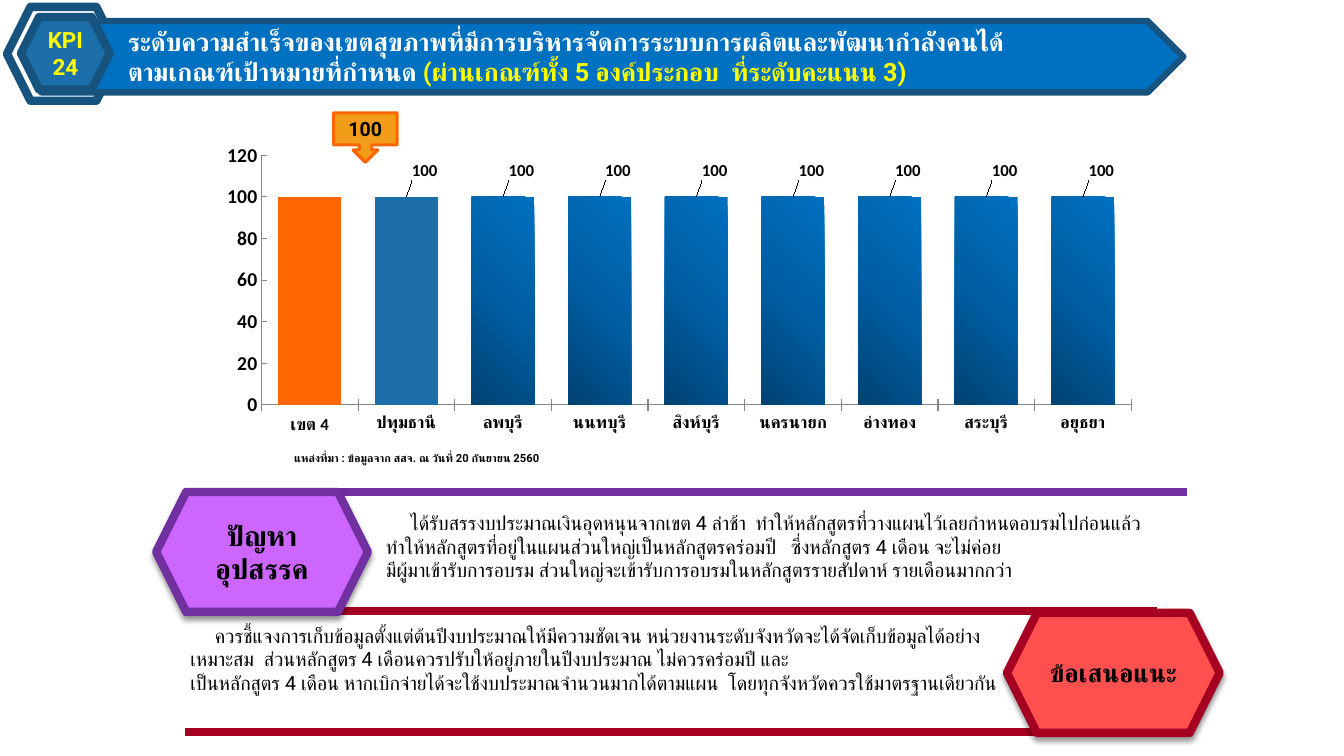
from lxml import etree
from pptx import Presentation
from pptx import util as u
from pptx.chart import data as chart_data
from pptx.dml.color import RGBColor
from pptx.enum import chart as charts, lang, shapes, text
from pptx.oxml import parse_xml
from pptx.oxml.ns import nsdecls, qn

COLORS = {
    "white": "FFFFFF", "black": "000000", "yellow": "FFFF00",
    "blue": "0070C0", "mid_blue": "005EA2", "deep_blue": "004272",
    "steel": "1D6FA9", "navy": "16537F", "orange": "FF6600", "amber": "F19D19",
    "purple": "7030A0", "violet": "CC66FF", "crimson": "A50021",
    "red": "FF5050", "gray": "868686",
}
SHAPE = shapes.MSO_SHAPE
MIDDLE, TOP = text.MSO_ANCHOR.MIDDLE, text.MSO_ANCHOR.TOP


def rgb(name):
    return RGBColor.from_string(COLORS[name])


class SlideBuilder:
    font = "Roboto"
    chart_font = "Calibri"

    def __init__(self, slide):
        self.slide = slide

    def line(self, x1, x2, y, color):
        connector = self.slide.shapes.add_connector(
            shapes.MSO_CONNECTOR.STRAIGHT, u.Pt(x1), u.Pt(y), u.Pt(x2), u.Pt(y))
        connector.line.color.rgb = rgb(color)
        connector.line.width = u.Pt(6)
        etree.SubElement(connector._element.spPr, qn("a:effectLst"))

    def shape(self, kind, box, fill, line, width, shadow=False):
        shape = self.slide.shapes.add_shape(kind, *map(u.Pt, box))
        if fill:
            shape.fill.solid()
            shape.fill.fore_color.rgb = rgb(fill)
        else:
            shape.fill.background()
        shape.line.color.rgb = rgb(line)
        shape.line.width = u.Pt(width)
        shape.shadow.inherit = False
        if shadow:
            shape._element.spPr.find(qn("a:effectLst")).append(parse_xml(
                f'<a:outerShdw {nsdecls("a")} blurRad="{u.Pt(4)}" dist="{u.Pt(3)}" '
                f'dir="5400000" rotWithShape="0"><a:srgbClr val="{COLORS["black"]}">'
                '<a:alpha val="40000"/></a:srgbClr></a:outerShdw>'))
        return shape

    def text_box(self, box):
        return self.slide.shapes.add_textbox(*map(u.Pt, box))

    def add_text(self, shape, paragraphs, size, bold=False, align=text.PP_ALIGN.LEFT,
                 anchor=TOP, wrap=True, margin=0, first_indent=0, inset=None):
        """Each paragraph is a list of (words, color) runs."""
        frame = shape.text_frame
        frame.word_wrap = wrap
        frame.vertical_anchor = anchor
        if inset is not None:
            frame.margin_left = frame.margin_right = u.Pt(inset)
        for number, runs in enumerate(paragraphs):
            paragraph = frame.add_paragraph() if number else frame.paragraphs[0]
            paragraph.alignment = align
            properties = paragraph._p.get_or_add_pPr()
            properties.set("marL", str(u.Pt(margin)))
            properties.set("indent", str(u.Pt(0 if number else first_indent)))
            for words, color in runs:
                run = paragraph.add_run()
                run.text = words
                run.font.name = self.font
                run.font.size = u.Pt(size)
                run.font.bold = bold
                run.font.color.rgb = rgb(color)
                run.font.language_id = lang.MSO_LANGUAGE_ID.THAI
                etree.SubElement(run._r.rPr, qn("a:cs"), typeface=self.font)

    def style_font(self, font, size, bold=True):
        font.name = self.chart_font
        font.size = u.Pt(size)
        font.bold = bold
        font.color.rgb = rgb("black")

    def layout(self, x, y, extra=""):
        return parse_xml(f'<c:layout {nsdecls("c")}><c:manualLayout>{extra}'
                         f'<c:x val="{x}"/><c:y val="{y}"/></c:manualLayout></c:layout>')

    def column_chart(self, box, categories, values):
        data = chart_data.CategoryChartData(number_format="0")
        data.categories = categories
        data.add_series("Series 1", values)
        chart = self.slide.shapes.add_chart(
            charts.XL_CHART_TYPE.COLUMN_CLUSTERED, *map(u.Pt, box), data).chart
        chart.has_title = chart.has_legend = False
        self.style_font(chart.font, 18, False)

        # Axes
        ticks = charts.XL_TICK_MARK
        for axis, size, tick in ((chart.category_axis, 12, ticks.CROSS),
                                 (chart.value_axis, 14, ticks.INSIDE)):
            self.style_font(axis.tick_labels.font, size)
            axis.major_tick_mark = tick
            axis.minor_tick_mark = ticks.NONE
            axis.has_major_gridlines = False
            axis.format.line.color.rgb = rgb("gray")
        chart.value_axis.minimum_scale = 0
        chart.value_axis.maximum_scale = 120
        chart.value_axis.major_unit = 20

        # Plot area
        area = chart._chartSpace.chart.plotArea
        for layout in area.findall(qn("c:layout")):
            area.remove(layout)
        layout = self.layout(0.05, 0.05, '<c:layoutTarget val="inner"/>'
                             '<c:xMode val="edge"/><c:yMode val="edge"/>')
        for side, value in (("w", 0.95), ("h", 0.82)):
            etree.SubElement(layout[0], qn(f"c:{side}"), val=str(value))
        area.insert(0, layout)

        # Columns: the region, the first province, then shaded provinces
        plot = chart.plots[0]
        plot.gap_width = 54
        plot.vary_by_categories = False
        series = plot.series[0]
        series.format.fill.solid()
        series.format.fill.fore_color.rgb = rgb("steel")
        labels = series.data_labels
        labels.show_value = True
        labels.number_format, labels.number_format_is_linked = "0", False
        self.style_font(labels.font, 12)
        for index in range(len(values)):
            point = series.points[index]
            self.style_font(point.data_label.font, 12)
            point.data_label.position = charts.XL_LABEL_POSITION.OUTSIDE_END
            if index != 1:
                point.format.fill.solid()
                point.format.fill.fore_color.rgb = rgb("orange")
        for column in series._element.findall(qn("c:dPt"))[1:]:
            self.shade(column)
        for index, label in enumerate(labels._element.findall(qn("c:dLbl"))):
            if index:
                label.insert(1, self.layout(0.02, -0.04))
            else:
                for child in label[1:]:
                    label.remove(child)
                etree.SubElement(label, qn("c:delete"), val="1")

    def shade(self, column):
        stops = "".join(
            f'<a:gs pos="{position}"><a:srgbClr val="{COLORS[color]}"/></a:gs>'
            for position, color in ((0, "deep_blue"), (50000, "mid_blue"), (100000, "blue")))
        properties = column.find(qn("c:spPr"))
        properties.replace(properties.find(qn("a:solidFill")), parse_xml(
            f'<a:gradFill {nsdecls("a")}><a:gsLst>{stops}</a:gsLst><a:path path="circle">'
            '<a:fillToRect t="100000" r="100000"/></a:path></a:gradFill>'))


def main():
    presentation = Presentation()
    presentation.slide_width, presentation.slide_height = u.Pt(960), u.Pt(540)
    builder = SlideBuilder(presentation.slides.add_slide(presentation.slide_layouts[6]))
    centered = {"bold": True, "align": text.PP_ALIGN.CENTER, "anchor": MIDDLE}

    # Chart with regional callout
    builder.line(217, 848, 351.4, "purple")
    callout = builder.shape(SHAPE.DOWN_ARROW_CALLOUT, (238.3, 80.6, 45.4, 35.3),
                            "amber", "orange", 2.25)
    builder.add_text(callout, [[("100", "black")]], 14, **centered)
    provinces = ["เขต 4", "ปทุมธานี", "ลพบุรี", "นนทบุรี", "สิงห์บุรี",
                 "นครนายก", "อ่างทอง", "สระบุรี", "อยุธยา"]
    builder.column_chart((154, 100, 654.5, 217.5), provinces, [100] * len(provinces))

    # Title banner with KPI badge
    builder.shape(SHAPE.HEXAGON, (5, 5, 80.6, 67), None, "navy", 6)
    banner = builder.shape(SHAPE.PENTAGON, (29.5, 15, 815.8, 51), "blue", "navy", 4.5)
    builder.add_text(banner, [
        [("ระดับความสำเร็จของเขตสุขภาพที่มีการบริหารจัดการระบบการผลิตและพัฒนากำลังคนได้", "white")],
        [("ตามเกณฑ์เป้าหมายที่กำหนด ", "white"),
         ("(ผ่านเกณฑ์ทั้ง 5 องค์ประกอบ  ที่ระดับคะแนน 3)", "yellow")],
    ], 18, bold=True, margin=55)
    badge = builder.shape(SHAPE.HEXAGON, (15, 12.2, 63.4, 51.8), "steel", "navy", 6)
    builder.add_text(badge, [[("KPI", "yellow")], [("24", "yellow")]], 16, inset=0, **centered)

    # Data source
    builder.add_text(builder.text_box((203, 319, 213, 17.3)),
                     [[("แหล่งที่มา : ข้อมูลจาก สสจ. ณ วันที่ 20 กันยายน 2560", "black")]],
                     8, bold=True, wrap=False)

    # Problem and suggestion badges
    builder.line(231.8, 826.6, 436.3, "crimson")
    problem = builder.shape(SHAPE.HEXAGON, (111.6, 351.4, 151.2, 85.7),
                            "violet", "purple", 6, shadow=True)
    builder.add_text(problem, [[("ปัญหาอุปสรรค", "black")]], 20, **centered)
    builder.line(132.5, 753.8, 522.7, "crimson")
    suggestion = builder.shape(SHAPE.HEXAGON, (719.3, 437.8, 151.9, 85.7),
                               "red", "crimson", 6, shadow=True)
    builder.add_text(suggestion, [[("ข้อเสนอแนะ", "black")]], 18, **centered)

    # Problem and suggestion details
    details = (
        ((268.6, 361.4, 586.8, 58.3), (
            "ได้รับสรรงบประมาณเงินอุดหนุนจากเขต 4 ล่าช้า  ทำให้หลักสูตรที่วางแผนไว้เลยกำหนดอบรมไปก่อนแล้ว  "
            "ทำให้หลักสูตรที่อยู่ในแผนส่วนใหญ่เป็นหลักสูตรคร่อมปี   ซึ่งหลักสูตร 4 เดือน จะไม่ค่อย",
            "มีผู้มาเข้ารับการอบรม ส่วนใหญ่จะเข้ารับการอบรมในหลักสูตรรายสัปดาห์ รายเดือนมากกว่า")),
        ((128.9, 442.1, 596.2, 74.9), (
            "ควรชี้แจงการเก็บข้อมูลตั้งแต่ต้นปีงบประมาณให้มีความชัดเจน หน่วยงานระดับจังหวัดจะได้จัดเก็บข้อมูลได้อย่าง"
            "เหมาะสม  ส่วนหลักสูตร 4 เดือนควรปรับให้อยู่ภายในปีงบประมาณ ไม่ควรคร่อมปี และ",
            "เป็นหลักสูตร 4 เดือน หากเบิกจ่ายได้จะใช้งบประมาณจำนวนมากได้ตามแผน  โดยทุกจังหวัดควรใช้มาตรฐานเดียวกัน")),
    )
    for box, paragraphs in details:
        builder.add_text(builder.text_box(box), [[(words, "black")] for words in paragraphs],
                         14, first_indent=17.5)

    presentation.save("out.pptx")


if __name__ == "__main__":
    main()
